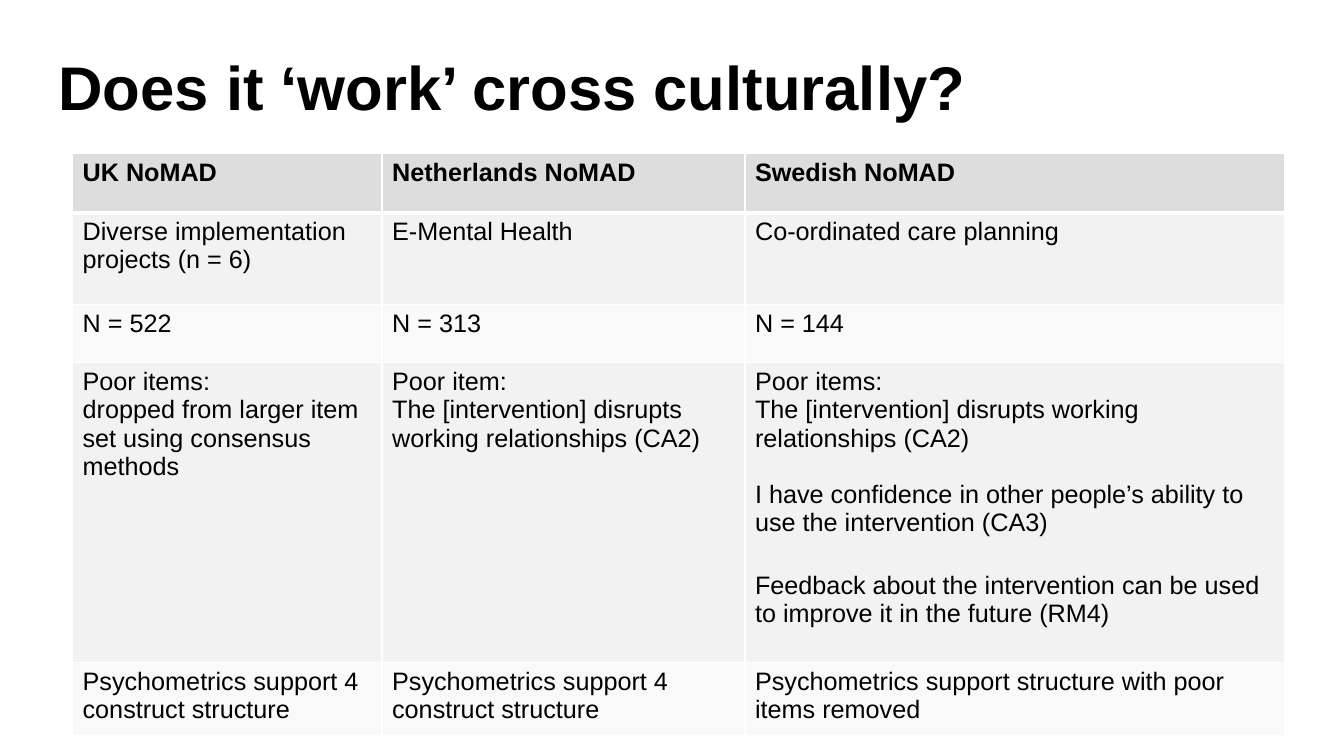
from dataclasses import dataclass

from lxml.etree import SubElement
from pptx import Presentation
from pptx.dml.color import RGBColor
from pptx.enum.text import MSO_ANCHOR, MSO_AUTO_SIZE, PP_ALIGN
from pptx.oxml import parse_xml
from pptx.oxml.ns import nsdecls, qn
from pptx.util import Inches, Pt


@dataclass(frozen=True)
class Theme:
    font: str = "Arial"
    ink: str = "000000"
    line: str = "FFFFFF"
    head: str = "DDDDDD"
    bands: tuple = ("F2F2F2", "F9F9F9")
    title: int = 44
    body: int = 18
    thin: int = 1
    thick: int = 3


THEME = Theme()
GRID = 100  # columns and rows across the slide

# Shares of the table's width and height
COLS = (3.07, 3.6, 5.35)
ROWS = (0.59, 0.91, 0.58, 2.97, 0.73)

# Each cell lists its paragraphs; a pair adds the space before in points
DATA = (
    (["UK NoMAD"], ["Netherlands NoMAD"], ["Swedish NoMAD"]),
    (["Diverse implementation projects (n = 6)"], ["E-Mental Health"],
     ["Co-ordinated care planning"]),
    (["N = 522"], ["N = 313"], ["N = 144"]),
    (["Poor items:", "dropped from larger item set using consensus methods"],
     ["Poor item:", "The [intervention] disrupts working relationships (CA2)"],
     ["Poor items:", "The [intervention] disrupts working relationships (CA2)",
      ("I have confidence in other people’s ability to use the "
       "intervention (CA3)", 20.2),
      ("Feedback about the intervention can be used to improve it in the "
       "future (RM4)", 24.7)]),
    (["Psychometrics support 4 construct structure"],
     ["Psychometrics support 4 construct structure"],
     ["Psychometrics support structure with poor items removed"]),
)


def write(frame, items, size=THEME.body, bold=False, spacing=None):
    for i, item in enumerate(items):
        text, gap = item if isinstance(item, tuple) else (item, 0)
        para = frame.add_paragraph() if i else frame.paragraphs[0]
        para.text = text
        para.alignment = PP_ALIGN.LEFT
        if gap:
            para.space_before = Pt(gap)
        if spacing:
            para.line_spacing = spacing
        font = para.runs[0].font
        font.name, font.size, font.bold = THEME.font, Pt(size), bold
        font.color.rgb = RGBColor.from_string(THEME.ink)


def paint(cell, fill, top, bottom):
    """Fill a cell and rule its four sides; widths are in points."""
    cell.fill.solid()
    cell.fill.fore_color.rgb = RGBColor.from_string(fill)
    sides = {"L": THEME.thin, "R": THEME.thin, "T": top, "B": bottom}
    props = cell._tc.get_or_add_tcPr()
    for i, (side, width) in enumerate(sides.items()):
        line = parse_xml(f'<a:ln{side} {nsdecls("a")} w="{Pt(width)}"/>')
        solid = SubElement(line, qn("a:solidFill"))
        SubElement(solid, qn("a:srgbClr"), val=THEME.line)
        props.insert(i, line)


def add_title(slide, box, text):
    title = slide.shapes.title
    title.left, title.top, title.width, title.height = box
    frame = title.text_frame
    frame.auto_size = MSO_AUTO_SIZE.NONE
    frame.vertical_anchor = MSO_ANCHOR.MIDDLE
    write(frame, [text], size=THEME.title, bold=True, spacing=0.9)


def add_grid(slide, box, data):
    table = slide.shapes.add_table(len(ROWS), len(COLS), *box).table
    for col, share in zip(table.columns, COLS):
        col.width = int(box[2] * share / sum(COLS))
    for row, share in zip(table.rows, ROWS):
        row.height = int(box[3] * share / sum(ROWS))
    for r, line in enumerate(data):
        fill = THEME.bands[(r - 1) % 2] if r else THEME.head
        top = THEME.thick if r == 1 else THEME.thin
        bottom = THEME.thin if r else THEME.thick
        for c, items in enumerate(line):
            cell = table.cell(r, c)
            paint(cell, fill, top, bottom)
            write(cell.text_frame, items, bold=r == 0)


def main():
    deck = Presentation()
    deck.slide_width, deck.slide_height = Inches(13.33), Inches(7.5)

    def place(col, row, wide, high):
        x, y = deck.slide_width / GRID, deck.slide_height / GRID
        return int(col * x), int(row * y), int(wide * x), int(high * y)

    slide = deck.slides.add_slide(deck.slide_layouts[5])
    add_grid(slide, place(5.4, 20.27, 90.17, 77.07), DATA)
    add_title(slide, place(3.6, 3.6, 76.14, 16.67),
              "Does it ‘work’ cross culturally?")
    deck.save("out.pptx")


if __name__ == "__main__":
    main()
